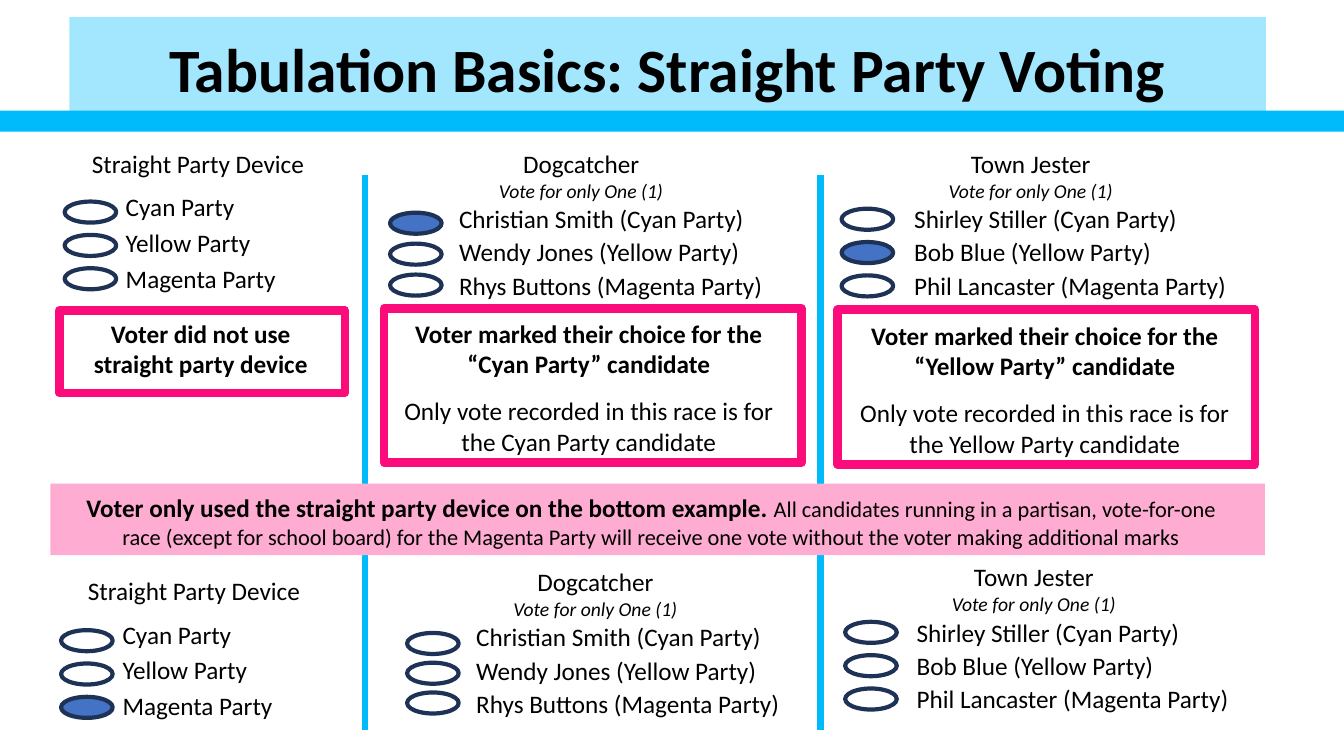
from dataclasses import dataclass

from lxml import etree
from pptx import Presentation
from pptx.dml.color import RGBColor
from pptx.enum.shapes import MSO_CONNECTOR, MSO_SHAPE
from pptx.enum.text import MSO_ANCHOR, MSO_AUTO_SIZE, PP_ALIGN
from pptx.oxml.ns import qn
from pptx.util import Cm, Pt

RECT, OVAL = MSO_SHAPE.RECTANGLE, MSO_SHAPE.OVAL
STRAIGHT = MSO_CONNECTOR.STRAIGHT
LEFT, CENTER = PP_ALIGN.LEFT, PP_ALIGN.CENTER
MIDDLE = MSO_ANCHOR.MIDDLE
GROW, FIXED = MSO_AUTO_SIZE.SHAPE_TO_FIT_TEXT, MSO_AUTO_SIZE.NONE
TITLE_ONLY = 5

Box = tuple[float, float, float, float]  # left, top, width, height in cm


@dataclass(frozen=True)
class Theme:
    font: str = "Calibri"
    ink: str = "000000"
    pale: str = "A3E7FF"
    cyan: str = "00BBFB"
    pink: str = "FC0B7A"
    blush: str = "FEACD1"
    navy: str = "1E3256"
    mark: str = "4472C4"
    title: int = 44
    body: int = 18
    small: int = 16
    hint: int = 14
    rim: float = 3
    rule: float = 4.5
    frame: float = 6


@dataclass(frozen=True)
class Line:
    text: str
    size: int
    bold: bool = False
    slant: bool = False
    gap: int = 0


@dataclass(frozen=True)
class Race:
    """A contest: heading lines, choices and the widths of their boxes."""
    head: tuple[Line, ...]
    wide: float
    tall: float
    names: tuple[str, ...]
    spans: tuple[float, ...]


@dataclass(frozen=True)
class Column:
    """Top left and step of each part; mark is the filled oval's index."""
    race: Race
    head: tuple[float, float]
    names: tuple[float, float, float]
    ovals: tuple[float, float, float]
    mark: int | None = None


@dataclass(frozen=True)
class Note:
    frame: Box
    area: Box
    lines: tuple[Line, ...]


THEME = Theme()
HINT = Line("Vote for only One (1)", THEME.hint, slant=True)
SPANS = (7.8, 7.95, 9.4)

DEVICE = Race((Line("Straight Party Device", THEME.body),), 7.14, 1.02,
              ("Cyan Party", "Yellow Party", "Magenta Party"), (5.64,) * 3)
CATCHER = Race((Line("Dogcatcher", THEME.body), HINT), 9.63, 1.63,
               ("Christian Smith (Cyan Party)", "Wendy Jones (Yellow Party)",
                "Rhys Buttons (Magenta Party)"), SPANS)
JESTER = Race((Line("Town Jester", THEME.body), HINT), 9.53, 1.63,
              ("Shirley Stiller (Cyan Party)", "Bob Blue (Yellow Party)",
               "Phil Lancaster (Magenta Party)"), SPANS)

COLUMNS = (
    Column(DEVICE, (1.42, 3.61), (2.92, 4.7, 0.9), (1.63, 5.08, 0.84)),
    Column(CATCHER, (9.83, 3.61), (11.32, 5, 0.84), (9.83, 5.36, 0.78), 0),
    Column(JESTER, (21.21, 3.61), (22.79, 5, 0.84), (21.21, 5.26, 0.84), 1),
    Column(DEVICE, (1.32, 14.38), (2.84, 15.47, 0.9), (1.54, 15.88, 0.84), 2),
    Column(CATCHER, (10.19, 14.15), (11.75, 15.54, 0.84), (10.26, 15.95, 0.75)),
    Column(JESTER, (21.29, 14.02), (22.85, 15.44, 0.83), (21.3, 15.67, 0.84)),
)


def choice(party: str) -> tuple[Line, ...]:
    return (
        Line(f"Voter marked their choice for the “{party} Party” candidate",
             THEME.body, bold=True),
        Line(f"Only vote recorded in this race is for the {party} Party candidate",
             THEME.body, gap=12),
    )


NOTES = (
    Note((1.5, 7.82, 7.19, 2.08), (1.63, 7.9, 6.86, 1.8),
         (Line("Voter did not use straight party device", THEME.body, bold=True),)),
    Note((9.68, 7.77, 10.52, 3.89), (9.8, 7.9, 10.08, 3.76), choice("Cyan")),
    Note((21.11, 7.8, 10.52, 3.91), (21.29, 7.95, 10.08, 3.76), choice("Yellow")),
)
BAND = (
    Line("Voter only used the straight party device on the bottom example. ",
         THEME.body, bold=True),
    Line("All candidates running in a partisan, vote-for-one race (except for "
         "school board) for the Magenta Party will receive one vote without "
         "the voter making additional marks", THEME.small),
)


def color(code: str) -> RGBColor:
    return RGBColor.from_string(code)


def style(font, line: Line) -> None:
    font.name = THEME.font
    font.size = Pt(line.size)
    font.bold = line.bold
    font.italic = line.slant
    font.color.rgb = color(THEME.ink)


def shape(slide, kind, box: Box, fill: str = "", edge: str = "", width: float = 0) -> None:
    item = slide.shapes.add_shape(kind, *map(Cm, box))
    item.shadow.inherit = False
    if fill:
        item.fill.solid()
        item.fill.fore_color.rgb = color(fill)
    else:
        item.fill.background()
    if edge:
        item.line.color.rgb = color(edge)
        item.line.width = Pt(width)
    else:
        item.line.fill.background()


def frame(slide, box: Box):
    body = slide.shapes.add_textbox(*map(Cm, box)).text_frame
    body.word_wrap = True
    body.auto_size = GROW
    return body


def write(slide, box: Box, lines: tuple[Line, ...], align=CENTER) -> None:
    """Add a text box with one paragraph for each line."""
    body = frame(slide, box)
    for i, line in enumerate(lines):
        para = body.add_paragraph() if i else body.paragraphs[0]
        para.text = line.text
        para.alignment = align
        para.space_before = Pt(line.gap)
        style(para.font, line)


def rule(slide, x: float) -> None:
    item = slide.shapes.add_connector(STRAIGHT, Cm(x), Cm(4.42), Cm(x), Cm(18.39))
    item.line.color.rgb = color(THEME.cyan)
    item.line.width = Pt(THEME.rule)
    etree.SubElement(item._element.spPr, qn("a:effectLst"))


def heading(slide) -> None:
    title = slide.shapes.title
    title.left, title.top, title.width, title.height = map(Cm, (1.75, 0.43, 30.15, 2.79))
    title.fill.solid()
    title.fill.fore_color.rgb = color(THEME.pale)
    body = title.text_frame
    body.auto_size = FIXED
    body.vertical_anchor = MIDDLE
    para = body.paragraphs[0]
    para.text = "Tabulation Basics: Straight Party Voting"
    para.alignment = CENTER
    para.line_spacing = 0.9
    style(para.font, Line("", THEME.title, bold=True))


def column(slide, col: Column) -> None:
    race = col.race
    write(slide, (*col.head, race.wide, race.tall), race.head)
    x, y, step = col.names
    left, top, pitch = col.ovals
    for i, (name, span) in enumerate(zip(race.names, race.spans)):
        write(slide, (x, y + i * step, span, 1.02), (Line(name, THEME.body),), LEFT)
        fill = THEME.mark if i == col.mark else ""
        shape(slide, OVAL, (left, top + i * pitch, 1.3, 0.53), fill, THEME.navy, THEME.rim)


def band(slide) -> None:
    shape(slide, RECT, (1.27, 12.19, 30.61, 1.8), THEME.blush)
    para = frame(slide, (1.4, 12.29, 30.02, 1.7)).paragraphs[0]
    para.alignment = CENTER
    for line in BAND:
        run = para.add_run()
        run.text = line.text
        style(run.font, line)


def main() -> None:
    deck = Presentation()
    deck.slide_width, deck.slide_height = Cm(33.87), Cm(19.05)
    slide = deck.slides.add_slide(deck.slide_layouts[TITLE_ONLY])
    heading(slide)
    shape(slide, RECT, (0, 2.79, 33.87, 0.53), THEME.cyan)
    for x in (9.19, 20.68):
        rule(slide, x)
    for col in COLUMNS:
        column(slide, col)
    for note in NOTES:
        shape(slide, RECT, note.frame, "", THEME.pink, THEME.frame)
        write(slide, note.area, note.lines)
    band(slide)
    deck.save("out.pptx")


if __name__ == "__main__":
    main()
